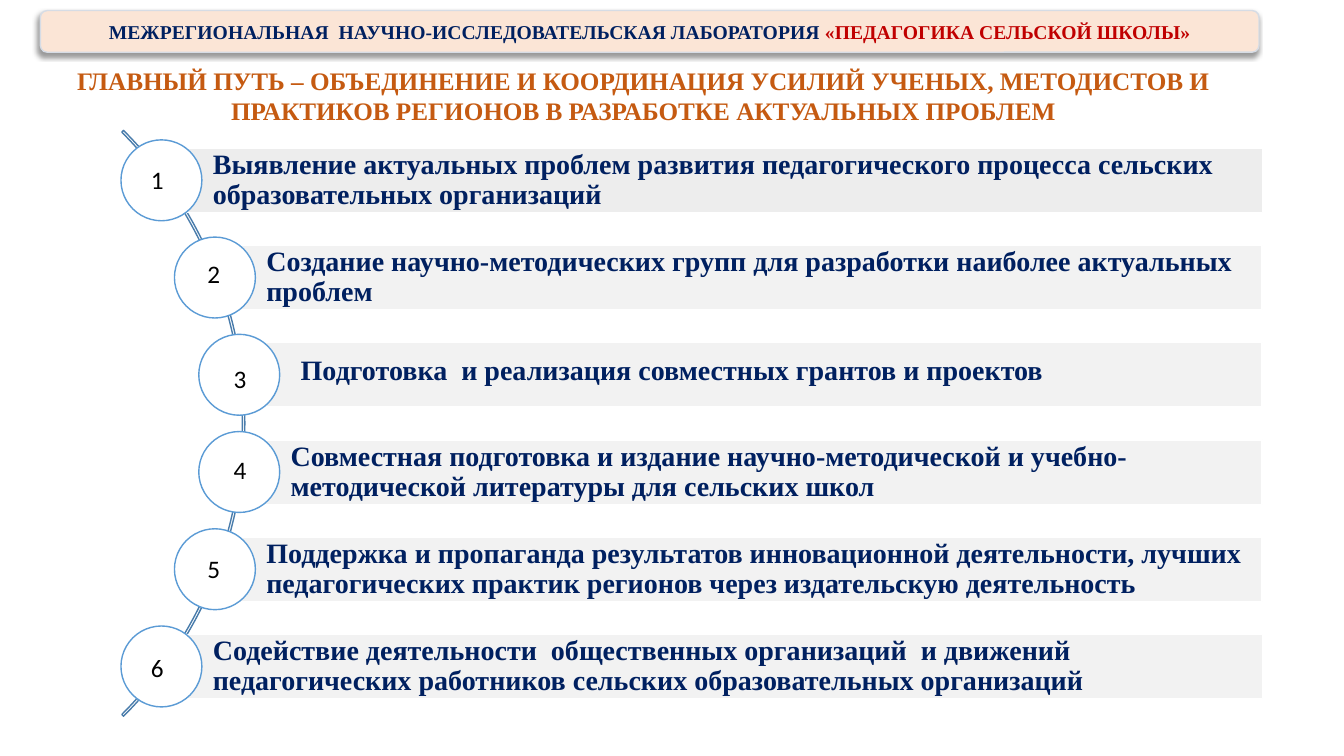
from lxml import etree
from pptx import Presentation
from pptx.dml.color import RGBColor
from pptx.enum.shapes import MSO_SHAPE
from pptx.enum.text import MSO_ANCHOR, MSO_AUTO_SIZE, PP_ALIGN
from pptx.util import Pt

ARC, RECT = MSO_SHAPE.BLOCK_ARC, MSO_SHAPE.RECTANGLE
OVAL, ROUND = MSO_SHAPE.OVAL, MSO_SHAPE.ROUNDED_RECTANGLE
TOP, MIDDLE = MSO_ANCHOR.TOP, MSO_ANCHOR.MIDDLE
LEFT, CENTER = PP_ALIGN.LEFT, PP_ALIGN.CENTER
NO_FIT = MSO_AUTO_SIZE.NONE

NAVY = RGBColor(0x00, 0x20, 0x60)
RED = RGBColor(0xC0, 0x00, 0x00)
ORANGE = RGBColor(0xC5, 0x5A, 0x11)
BLACK = RGBColor(0x00, 0x00, 0x00)
WHITE = RGBColor(0xFF, 0xFF, 0xFF)
BLUE = RGBColor(0x5B, 0x9B, 0xD5)
ARC_BLUE = RGBColor(0x49, 0x7C, 0xAB)
SILVER = RGBColor(0xED, 0xED, 0xED)
GRAY = RGBColor(0xF2, 0xF2, 0xF2)
PEACH = RGBColor(0xFB, 0xE5, 0xD6)
PALE_BLUE = RGBColor(0xD6, 0xDC, 0xE5)

SERIF = "Times New Roman"
BAR_RIGHT, BAR_TOP, BAR_H, STEP = 901.6, 105.8, 46, 69.45
CIRCLE = 57.8

ROWS = [
    ("Выявление актуальных проблем развития педагогического процесса сельских "
     "образовательных организаций", 86.4, SILVER, 100.8, 113.8),
    ("Создание научно-методических групп для разработки наиболее актуальных "
     "проблем", 124.6, GRAY, 141.1, 180.7),
    ("Подготовка  и реализация совместных грантов и проектов",
     142, GRAY, 159.8, 255.6),
    ("Совместная подготовка и издание научно-методической и "
     "учебно-методической литературы для сельских школ", 142, GRAY, 159.8, 321.1),
    ("Поддержка и пропаганда результатов инновационной деятельности, лучших "
     "педагогических практик регионов через издательскую деятельность",
     124.6, GRAY, 141.1, 391.7),
    ("Содействие деятельности  общественных организаций  и движений  "
     "педагогических работников сельских образовательных организаций",
     86.4, GRAY, 100.8, 462.2),
]


def add_shape(kind, x, y, w, h, fill, line):
    sp = s.shapes.add_shape(kind, Pt(x), Pt(y), Pt(w), Pt(h))
    sp.shadow.inherit = False
    if fill is None:
        sp.fill.background()
    else:
        sp.fill.solid()
        sp.fill.fore_color.rgb = fill
    sp.line.color.rgb = line
    sp.line.width = Pt(1)
    return sp


def add_text(sp, runs, size, font, bold, align, anchor):
    tf = sp.text_frame
    frame = {"word_wrap": True, "auto_size": NO_FIT, "vertical_anchor": anchor}
    for name, value in frame.items():
        setattr(tf, name, value)
    p = tf.paragraphs[0]
    p.alignment = align
    for text, color in runs:
        r = p.add_run()
        r.text = text
        for name, value in {"size": Pt(size), "name": font, "bold": bold}.items():
            setattr(r.font, name, value)
        r.font.color.rgb = color
    return tf


prs = Presentation()
prs.slide_width, prs.slide_height = Pt(960), Pt(540)
s = prs.slides.add_slide(prs.slide_layouts[5])

title = s.shapes.title
box = {"left": Pt(20.2), "top": Pt(43.2), "width": Pt(879), "height": Pt(51)}
for name, value in box.items():
    setattr(title, name, value)
add_text(title, [("ГЛАВНЫЙ ПУТЬ – ОБЪЕДИНЕНИЕ И КООРДИНАЦИЯ УСИЛИЙ УЧЕНЫХ, МЕТОДИСТОВ И "
                  "ПРАКТИКОВ РЕГИОНОВ В РАЗРАБОТКЕ АКТУАЛЬНЫХ ПРОБЛЕМ", ORANGE)],
         18, SERIF, True, CENTER, TOP)

arc = add_shape(ARC, -416.9, 6.5, 591.8, 591.8, None, ARC_BLUE)
for i, value in enumerate((189, 27, 0.003)):
    arc.adjustments[i] = value

for i, (text, x, fill, num_x, num_y) in enumerate(ROWS):
    y = BAR_TOP + i * STEP
    bar_x = x + CIRCLE / 2
    bar = add_shape(RECT, bar_x, y, BAR_RIGHT - bar_x, BAR_H, fill, WHITE)
    tf = add_text(bar, [(text, NAVY)], 20, SERIF, True, LEFT, MIDDLE)
    single = i == 2
    insets = {"margin_left": Pt(43.9 if single else 36.7), "margin_right": Pt(4.3),
              "margin_top": Pt(4.3), "margin_bottom": Pt(8.6 if single else 4.3)}
    for name, value in insets.items():
        setattr(tf, name, value)
    tf.paragraphs[0].line_spacing = 0.9

    add_shape(OVAL, x, y + (BAR_H - CIRCLE) / 2, CIRCLE, CIRCLE, WHITE, BLUE)
    num = s.shapes.add_textbox(Pt(num_x), Pt(num_y), Pt(30), Pt(29))
    add_text(num, [(str(i + 1), BLACK)], 18, "Calibri", False, LEFT, TOP)

header = add_shape(ROUND, 28.8, 7.5, 870.5, 29.8, PEACH, PALE_BLUE)
add_text(header, [("МЕЖРЕГИОНАЛЬНАЯ  НАУЧНО-ИССЛЕДОВАТЕЛЬСКАЯ ЛАБОРАТОРИЯ ", NAVY),
                  ("«ПЕДАГОГИКА СЕЛЬСКОЙ ШКОЛЫ»", RED)],
         14, SERIF, True, CENTER, MIDDLE)
A = "{http://schemas.openxmlformats.org/drawingml/2006/main}"
effects = header.element.spPr.find(A + "effectLst")
shadow = etree.SubElement(effects, A + "outerShdw", blurRad=str(Pt(4)),
                          dist=str(Pt(3)), dir="8100000", rotWithShape="0")
shade = etree.SubElement(shadow, A + "srgbClr", val="000000")
etree.SubElement(shade, A + "alpha", val="40000")

prs.save("out.pptx")
